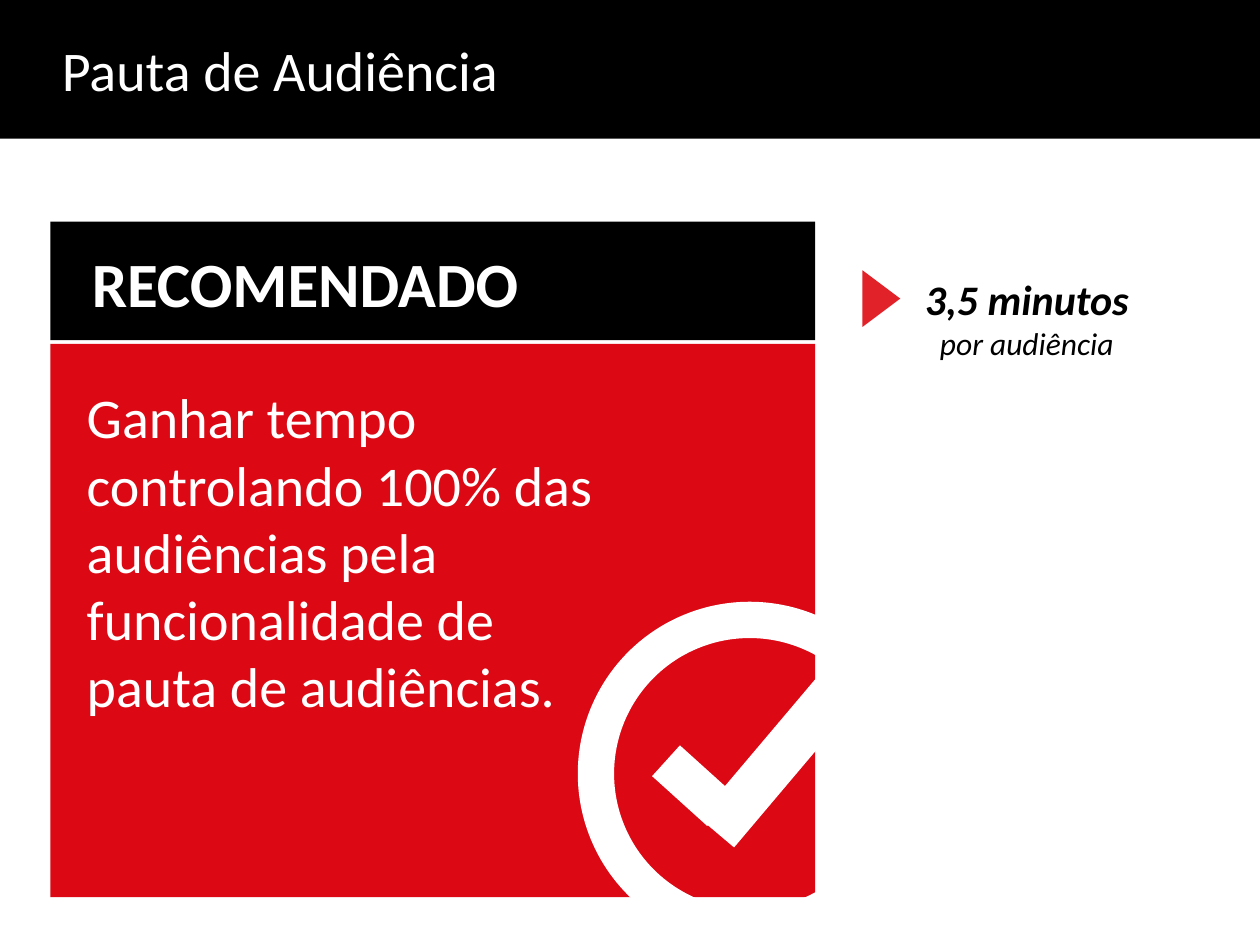
from pptx import Presentation
from pptx import util as u
from pptx.dml.color import RGBColor
from pptx.enum import shapes, text

THEME = {
    "font": "Calibri",
    "black": "000000", "white": "FFFFFF", "red": "DC0814", "mark": "E12229",
    "head": 36, "body": 32, "stat": 24, "note": 18,
}
KIND = shapes.MSO_SHAPE

TITLE = "Pauta de Audiência"
HEAD = "RECOMENDADO"
BODY = ("Ganhar tempo controlando 100% das audiências pela "
        "funcionalidade de pauta de audiências.")
STAT = [("3,5 minutos", "stat", True), ("por audiência", "note", False)]

WIDE, HIGH, BAR = 720, 540, 79.2
LEFT, TOP, SPAN = 28.8, 126.72, 437.04
CAP, GAP, DEEP = 67.68, 2.16, 316.08
RING = (340.56, 354.24, 175.68, 175.68)
RIM = 20.75
TICK = [((384.48, 427.68, 23.76, 42.48), 312.1),
        ((439.92, 355.68, 26.64, 136.08), 40.2)]


def tone(name):
    return RGBColor.from_string(THEME[name])


def place(item, box):
    item.left, item.top, item.width, item.height = map(u.Pt, box)


def write(par, words, size="body", color="white", bold=False, ital=False,
          align=text.PP_ALIGN.LEFT):
    par.alignment = align
    run = par.add_run()
    run.text = words
    font = run.font
    font.name, font.size = THEME["font"], u.Pt(THEME[size])
    font.bold, font.italic = bold, ital
    font.color.rgb = tone(color)


def shape(slide, kind, box, fill=None, turn=0):
    item = slide.shapes.add_shape(kind, *map(u.Pt, box))
    item.shadow.inherit = False
    item.rotation = turn
    item.line.fill.background()
    if fill:
        item.fill.solid()
        item.fill.fore_color.rgb = tone(fill)
    else:
        item.fill.background()
    return item


def label(slide, box, wrap=True):
    frame = slide.shapes.add_textbox(*map(u.Pt, box)).text_frame
    frame.word_wrap = wrap
    frame.auto_size = text.MSO_AUTO_SIZE.SHAPE_TO_FIT_TEXT
    return frame


def banner(slide):
    title = slide.shapes.title
    place(title, (0, 0, WIDE, BAR))
    title.fill.solid()
    title.fill.fore_color.rgb = tone("black")
    frame = title.text_frame
    frame.auto_size = text.MSO_AUTO_SIZE.NONE
    frame.vertical_anchor = text.MSO_ANCHOR.MIDDLE
    frame.margin_left = u.Pt(35.28)
    write(frame.paragraphs[0], TITLE)


def panel(slide):
    shape(slide, KIND.RECTANGLE, (LEFT, TOP, SPAN, CAP), "black")
    shape(slide, KIND.RECTANGLE, (LEFT, TOP + CAP + GAP, SPAN, DEEP), "red")
    head = label(slide, (45.36, 136.08, 388.08, 50.4))
    write(head.paragraphs[0], HEAD, size="head", bold=True)
    ring = shape(slide, KIND.OVAL, RING)
    ring.line.color.rgb = tone("white")
    ring.line.width = u.Pt(RIM)
    for box, turn in TICK:
        shape(slide, KIND.RECTANGLE, box, "white", turn)
    body = label(slide, (42.48, 215.28, 326.88, 200.88))
    write(body.paragraphs[0], BODY)


def stat(slide):
    shape(slide, KIND.ISOSCELES_TRIANGLE, (487.44, 159.84, 32.4, 21.6), "mark", 90)
    frame = label(slide, (520.56, 152.64, 132.48, 58.32), wrap=False)
    for row, (words, size, bold) in enumerate(STAT):
        par = frame.add_paragraph() if row else frame.paragraphs[0]
        write(par, words, size=size, color="black", bold=bold, ital=True,
              align=text.PP_ALIGN.CENTER)


def main():
    deck = Presentation()
    deck.slide_width, deck.slide_height = u.Pt(WIDE), u.Pt(HIGH)
    slide = deck.slides.add_slide(deck.slide_layouts[5])
    banner(slide)
    panel(slide)
    stat(slide)
    deck.save("out.pptx")


if __name__ == "__main__":
    main()
